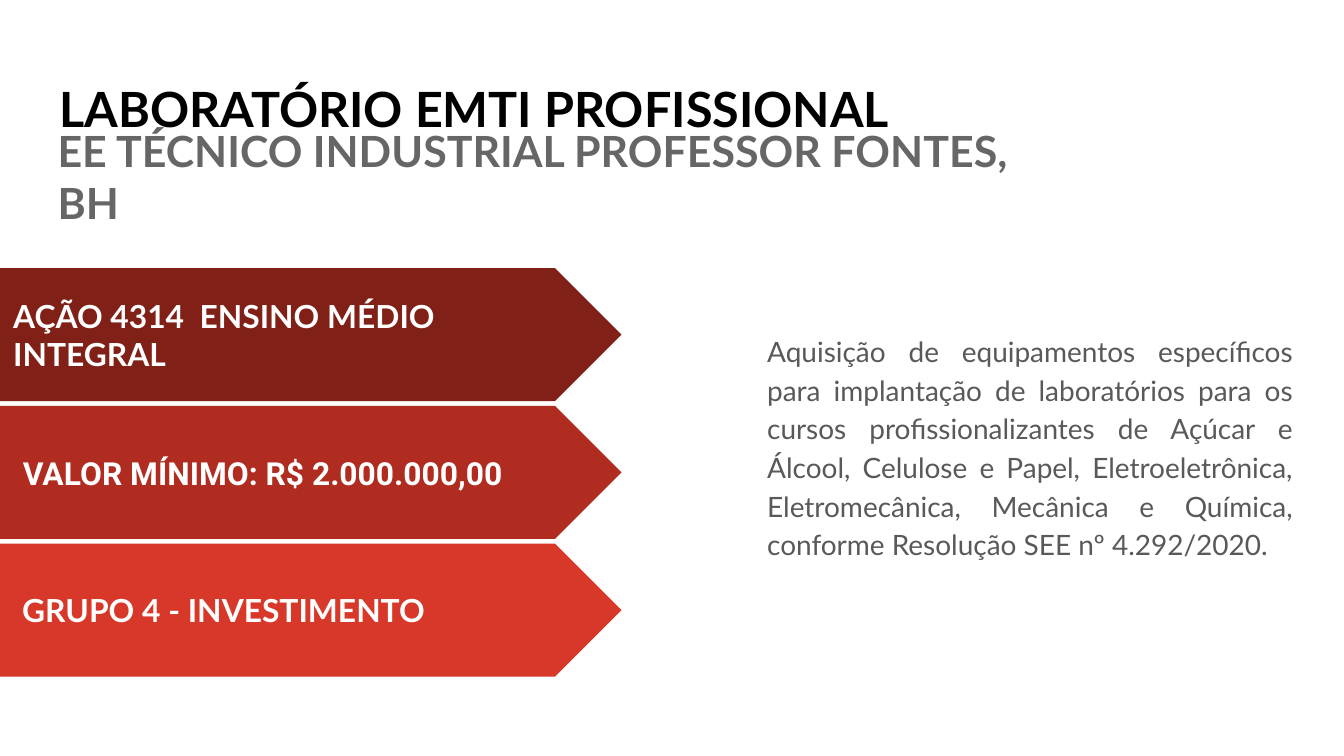
from pptx import Presentation
from pptx.dml.color import RGBColor
from pptx.enum.shapes import MSO_SHAPE as Shape
from pptx.enum.text import MSO_ANCHOR as Anchor, PP_ALIGN as Align
from pptx.util import Inches, Pt

BLACK = RGBColor(0x00, 0x00, 0x00)
WHITE = RGBColor(0xFF, 0xFF, 0xFF)
GRAY = RGBColor(0x66, 0x66, 0x66)
BODY_GRAY = RGBColor(0x59, 0x59, 0x59)
DARK_RED = RGBColor(0x80, 0x20, 0x17)
MID_RED = RGBColor(0xB0, 0x2C, 0x20)
BRIGHT_RED = RGBColor(0xD8, 0x38, 0x29)

WIDTH = 10
HEIGHT = WIDTH * 9 / 16
CELL = 0.1  # side of a grid cell, in inches
MARGIN = 1  # text margin, in cells


def grid(*cells):
    return [Inches(count * CELL) for count in cells]


def write(frame, text, size, color, font="Lato", bold=True, anchor=Anchor.TOP,
          align=Align.LEFT, line=1.0, after=0, left=MARGIN):
    frame.word_wrap = True
    frame.vertical_anchor = anchor
    frame.margin_left, frame.margin_top, frame.margin_right, frame.margin_bottom = grid(
        left, MARGIN, MARGIN, MARGIN)
    paragraph = frame.paragraphs[0]
    paragraph.alignment = align
    paragraph.line_spacing = line
    paragraph.space_after = Pt(after)
    run = paragraph.add_run()
    run.text = text
    run.font.name, run.font.size, run.font.bold = font, Pt(size), bold
    run.font.color.rgb = color


class Page:
    """Holds the current slide; positions are columns and rows of the grid."""

    def __init__(self, deck):
        self.slide = deck.slides.add_slide(deck.slide_layouts[6])

    def text(self, box, text, size, color, **style):
        area = self.slide.shapes.add_textbox(*grid(*box))
        write(area.text_frame, text, size, color, **style)

    def arrow(self, kind, box, fill, text, **style):
        arrow = self.slide.shapes.add_shape(kind, *grid(*box))
        arrow.adjustments[0] = 0.5
        arrow.shadow.inherit = False
        arrow.fill.solid()
        arrow.fill.fore_color.rgb = fill
        arrow.line.fill.background()
        write(arrow.text_frame, text, 17, WHITE, anchor=Anchor.MIDDLE, **style)


def main():
    deck = Presentation()
    deck.slide_width, deck.slide_height = Inches(WIDTH), Inches(HEIGHT)
    page = Page(deck)

    # Heading and description
    page.text((3.45, 4.9, 63.8, 6.3), "LABORATÓRIO EMTI PROFISSIONAL", 26, BLACK)
    page.text((56.1, 15.65, 41.1, 35),
              "Aquisição de equipamentos específicos para implantação de laboratórios "
              "para os cursos profissionalizantes de Açúcar e Álcool, Celulose e Papel, "
              "Eletroeletrônica, Eletromecânica, Mecânica e Química, conforme "
              "Resolução SEE nº 4.292/2020.",
              15, BODY_GRAY, bold=False, anchor=Anchor.MIDDLE,
              align=Align.JUSTIFY, line=1.15, after=16)
    page.text((3.3, 8.3, 73.9, 6.3),
              "EE TÉCNICO INDUSTRIAL PROFESSOR FONTES, BH", 23, GRAY)

    # Arrows, evenly spaced and ending at the same column
    top, pitch, height, tip = 19.95, 10.25, 9.9, 46.25
    arrows = [
        (Shape.PENTAGON, 0, DARK_RED, "AÇÃO 4314  ENSINO MÉDIO INTEGRAL", {}),
        (Shape.CHEVRON, -6, MID_RED, "VALOR MÍNIMO: R$ 2.000.000,00",
         {"font": "Roboto", "left": 2.75}),
        (Shape.CHEVRON, -6, BRIGHT_RED, "GRUPO 4 - INVESTIMENTO", {"left": 2.7}),
    ]
    for row, (kind, start, fill, text, style) in enumerate(arrows):
        page.arrow(kind, (start, top + row * pitch, tip - start, height),
                   fill, text, **style)

    deck.save("out.pptx")


if __name__ == "__main__":
    main()
